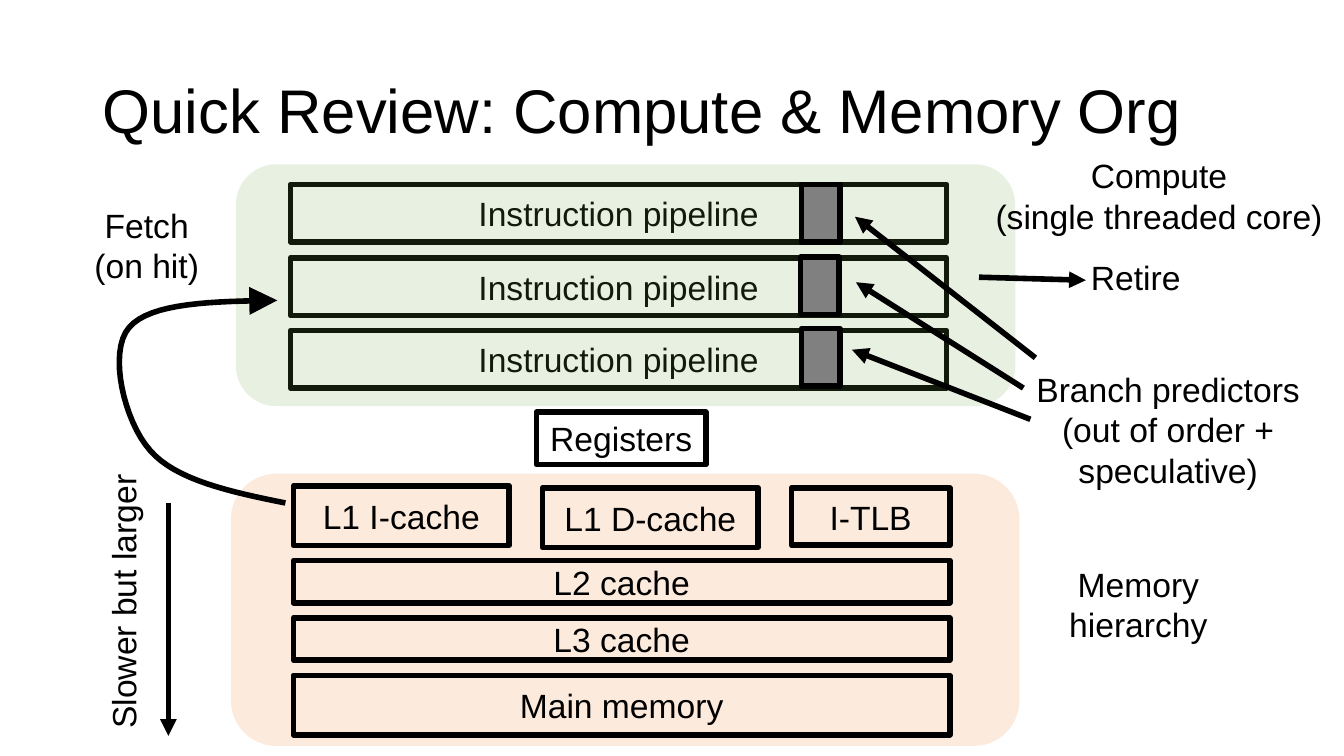
from lxml.etree import SubElement
from pptx import Presentation
from pptx.dml.color import RGBColor
from pptx.enum.shapes import MSO_CONNECTOR as Connector, MSO_SHAPE as Shape
from pptx.enum.text import MSO_ANCHOR as Anchor, PP_ALIGN as Align
from pptx.oxml.ns import qn
from pptx.util import Inches, Pt

TITLE = "Quick Review: Compute & Memory Org"
COLORS = {"ink": "000000", "compute": "70AD47", "memory": "ED7D31", "predictor": "808080"}
FONT = "Arial"

MEMORY_PANEL = (2.29, 4.7, 7.82, 2.7)
COMPUTE_PANEL = (2.34, 1.63, 7.73, 2.4)
PIPELINE_TOPS = [1.83, 2.56, 3.28]
PREDICTORS = [(7.95, 1.83), (7.94, 2.55), (7.95, 3.26)]
MEMORY_BOXES = [
    ("L1 I-cache", 2.91, 4.82, 2.14, 0.59),
    ("L1 D-cache", 5.38, 4.84, 2.14, 0.59),
    ("I-TLB", 7.85, 4.84, 1.57, 0.57),
    ("L2 cache", 2.91, 5.56, 6.51, 0.42),
    ("L3 cache", 2.91, 6.13, 6.51, 0.42),
    ("Main memory", 2.91, 6.7, 6.51, 0.59),
]
REGISTERS = ("Registers", 5.32, 4.09, 1.68, 0.52)
LABELS = [
    (["Compute", "(single threaded core)"], (9.75, 1.49, 3.49, 0.91), 0),
    (["Memory", "hierarchy"], (10.45, 5.54, 1.68, 0.91), 0),
    (["Slower but larger"], (-0.34, 5.72, 3.12, 0.5), 270),
    (["Fetch", "(on hit)"], (0.65, 1.98, 1.61, 0.91), 0),
    (["Branch predictors", "(out of order + speculative)"], (9.84, 3.61, 3.49, 1.31), 0),
    (["Retire"], (10.4, 2.5, 1.73, 0.5), 0),
]
ARROWS = [
    ((1.67, 4.99), (1.67, 7.3)),
    ((10.27, 3.55), (8.48, 2.15)),
    ((10.15, 3.85), (8.49, 2.8)),
    ((10.22, 4.16), (8.45, 3.47)),
    ((9.71, 2.75), (10.77, 2.78)),
]
FETCH_CURVE = [
    ((2.83, 4.99), (2.28, 4.88), (1.74, 4.76), (1.49, 4.47)),
    ((1.49, 4.47), (1.23, 4.18), (1.07, 3.49), (1.28, 3.25)),
    ((1.28, 3.25), (1.49, 3), (2.12, 2.99), (2.75, 2.98)),
]
CURVE_STEPS = 16


def color(name):
    return RGBColor.from_string(COLORS[name])


def inches(values):
    return [Inches(value) for value in values]


def write(frame, lines, size=24, align=Align.CENTER, anchor=Anchor.MIDDLE, spacing=None):
    frame.word_wrap = True
    frame.vertical_anchor = anchor
    for index, line in enumerate(lines):
        para = frame.add_paragraph() if index else frame.paragraphs[0]
        para.alignment = align
        para.line_spacing = spacing
        span = para.add_run()
        span.text = line
        span.font.size = Pt(size)
        span.font.name = FONT
        span.font.color.rgb = color("ink")


def outline(item, head=None):
    item.line.color.rgb = color("ink")
    item.line.width = Pt(4)
    if head:
        SubElement(item.line._get_or_add_ln(), qn("a:tailEnd"), type="triangle", w=head, len=head)


def add_box(page, place, text=None, fill=None):
    box = page.shapes.add_shape(Shape.RECTANGLE, *inches(place))
    box.shadow.inherit = False
    if fill:
        box.fill.solid()
        box.fill.fore_color.rgb = color(fill)
    else:
        box.fill.background()
    outline(box)
    if text:
        write(box.text_frame, [text])


def add_panel(page, place, fill):
    panel = page.shapes.add_shape(Shape.ROUNDED_RECTANGLE, *inches(place))
    panel.shadow.inherit = False
    panel.fill.solid()
    panel.fill.fore_color.rgb = color(fill)
    panel.line.fill.background()
    tint = panel._element.spPr.find(qn("a:solidFill"))[0]
    SubElement(tint, qn("a:alpha"), val="16000")


def add_arrow(page, start, end):
    arrow = page.shapes.add_connector(Connector.STRAIGHT, *inches(start + end))
    outline(arrow, head="med")
    SubElement(arrow._element.spPr, qn("a:effectLst"))


def curve_point(segment, t):
    weights = ((1 - t) ** 3, 3 * t * (1 - t) ** 2, 3 * t ** 2 * (1 - t), t ** 3)
    return tuple(inches(sum(w * v for w, v in zip(weights, axis)) for axis in zip(*segment)))


def add_fetch_arrow(page):
    points = [curve_point(segment, step / CURVE_STEPS)
              for segment in FETCH_CURVE for step in range(1, CURVE_STEPS + 1)]
    builder = page.shapes.build_freeform(*inches(FETCH_CURVE[0][0]))
    builder.add_line_segments(points, close=False)
    curve = builder.convert_to_shape()
    curve.shadow.inherit = False
    curve.fill.background()
    outline(curve, head="lg")


def main():
    deck = Presentation()
    deck.slide_width, deck.slide_height = inches((13.33, 7.5))
    page = deck.slides.add_slide(deck.slide_layouts[5])

    title = page.shapes.title
    title.left, title.top, title.width, title.height = inches((0.92, 0.4, 11.5, 1.45))
    write(title.text_frame, [TITLE], size=44, align=Align.LEFT, spacing=0.9)

    add_panel(page, MEMORY_PANEL, "memory")
    for top in PIPELINE_TOPS:
        add_box(page, (2.88, top, 6.51, 0.57), "Instruction pipeline")
    for text, *place in MEMORY_BOXES + [REGISTERS]:
        add_box(page, place, text)
    add_panel(page, COMPUTE_PANEL, "compute")
    for left, top in PREDICTORS:
        add_box(page, (left, top, 0.38, 0.57), fill="predictor")

    for lines, place, rotation in LABELS:
        label = page.shapes.add_textbox(*inches(place))
        label.rotation = rotation
        write(label.text_frame, lines, anchor=Anchor.TOP)
    for start, end in ARROWS:
        add_arrow(page, start, end)
    add_fetch_arrow(page)

    deck.save("out.pptx")


if __name__ == "__main__":
    main()
